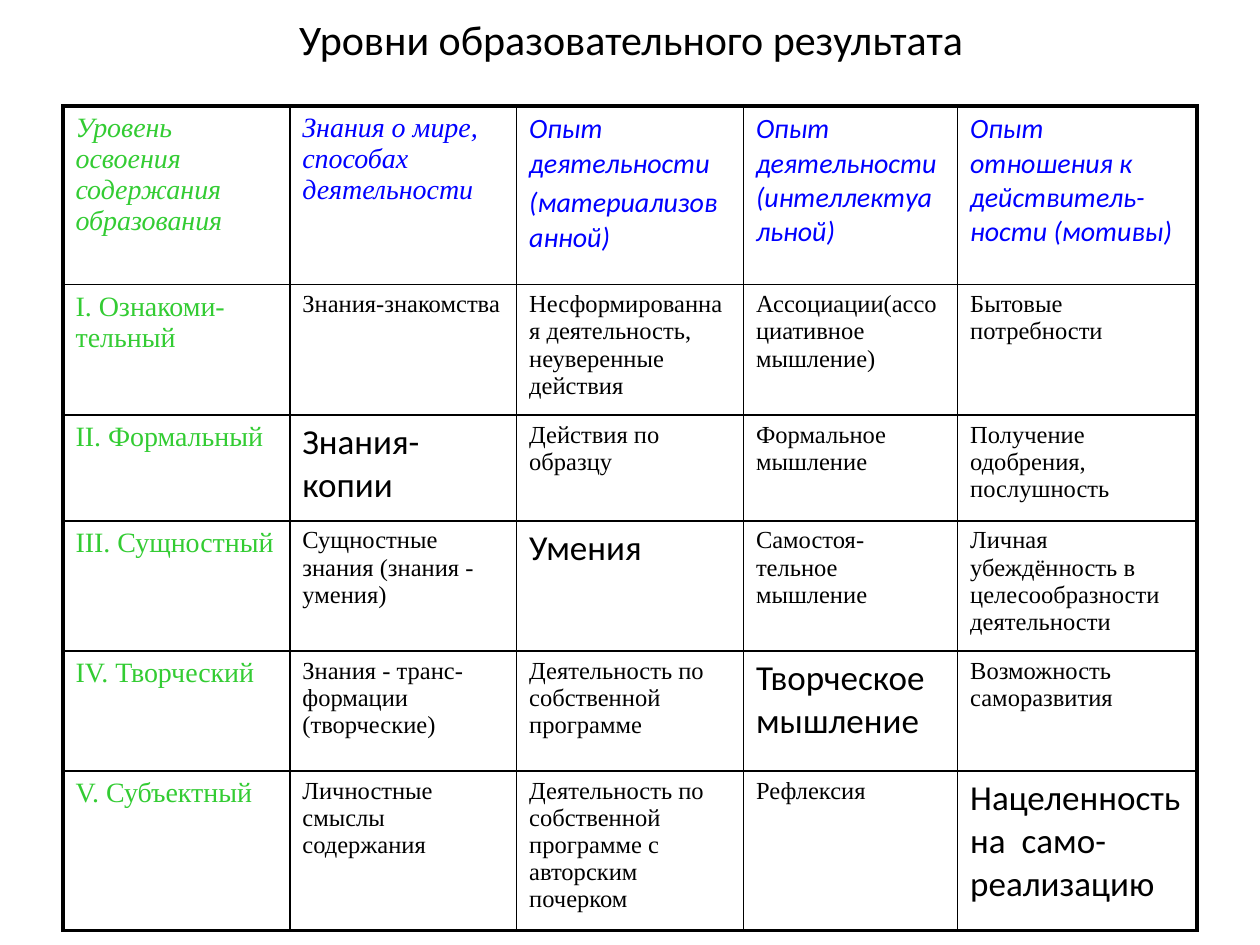
from dataclasses import dataclass, field

from lxml import etree
from pptx import Presentation, util as u
from pptx.dml.color import RGBColor
from pptx.enum import text
from pptx.oxml.ns import qn

BLACK, GREEN, BLUE = "000000", "33CC33", "0000FF"
SERIF, SANS = "Times New Roman", "Calibri"
COLS = [1.8, 1.8, 1.8, 1.7, 1.9]
ROWS = [1.42, 0.95, 0.84, 1.03, 0.95, 1.26]
LEVELS = [
    ["Уровень освоения содержания образования",
     "Знания о мире, способах деятельности",
     "Опыт деятельности\n(материализованной)",
     "Опыт деятельности (интеллектуальной)",
     "Опыт  отношения к действитель-ности (мотивы)"],
    ["I. Ознакоми-тельный", "Знания-знакомства",
     "Несформированная деятельность, неуверенные действия",
     "Ассоциации(ассоциативное мышление)", "Бытовые потребности"],
    ["II. Формальный", "Знания-копии", "Действия по образцу",
     "Формальное мышление", "Получение одобрения, послушность"],
    ["III. Сущностный", "Сущностные знания (знания - умения)", "Умения",
     "Самостоя-тельное мышление",
     "Личная убеждённость в целесообразности деятельности"],
    ["IV. Творческий", "Знания - транс-формации (творческие)",
     "Деятельность по собственной программе", "Творческое мышление",
     "Возможность саморазвития"],
    ["V. Субъектный", "Личностные смыслы содержания",
     "Деятельность по собственной программе с авторским почерком",
     "Рефлексия", "Нацеленность на  само-реализацию"],
]


def rgb(value):
    return RGBColor.from_string(value)


def level_format(row, col):
    if row == 0:
        return {"size": 16, "name": SANS if col > 1 else SERIF,
                "color": BLUE if col else GREEN, "italic": True}
    if col == 0:
        return {"size": 16, "name": SERIF, "color": GREEN}
    if row > 1 and col == row - 1:
        return {"size": 20, "name": SANS, "color": BLACK}
    return {"size": 14, "name": SERIF, "color": BLACK}


@dataclass
class Deck:
    """Holds the style and the current slide, and draws its elements."""

    s: object
    thin: float = 1
    thick: float = 2.25
    base: dict = field(default_factory=lambda: {"bold": False, "italic": False})

    def add_text(self, tf, content, fmt, before=0, align=text.PP_ALIGN.LEFT):
        values = {**self.base, **fmt}
        color = values.pop("color")
        values["size"] = u.Pt(fmt["size"])
        for i, line in enumerate(content.split("\n")):
            p = tf.add_paragraph() if i else tf.paragraphs[0]
            p.alignment = align
            p.space_before = u.Pt(before * fmt["size"])
            r = p.add_run()
            r.text = line
            for key, value in values.items():
                setattr(r.font, key, value)
            r.font.color.rgb = rgb(color)

    def title(self, content, box, fmt):
        tf = self.s.shapes.add_textbox(*map(u.Inches, box)).text_frame
        tf.word_wrap = True
        tf.vertical_anchor = text.MSO_ANCHOR.MIDDLE
        self.add_text(tf, content, fmt, align=text.PP_ALIGN.CENTER)

    def border(self, cell, side, width):
        ln = etree.SubElement(cell._tc.get_or_add_tcPr(), qn(f"a:ln{side}"),
                              w=str(u.Pt(width)))
        fill = etree.SubElement(ln, qn("a:solidFill"))
        etree.SubElement(fill, qn("a:srgbClr"), val=BLACK)

    def table(self, cells, left, top, cols, rows, fmt):
        box = map(u.Inches, (left, top, sum(cols), sum(rows)))
        tbl = self.s.shapes.add_table(len(rows), len(cols), *box).table
        tbl.first_row = tbl.horz_banding = False
        for column, width in zip(tbl.columns, cols):
            column.width = u.Inches(width)
        for i, height in enumerate(rows):
            tbl.rows[i].height = u.Inches(height)
            for j, content in enumerate(cells[i]):
                cell = tbl.cell(i, j)
                self.add_text(cell.text_frame, content, fmt(i, j), before=0.2)
                outer = {"L": j == 0, "R": j == len(cols) - 1,
                         "T": i == 0, "B": i == len(rows) - 1}
                for side, edge in outer.items():
                    self.border(cell, side, self.thick if edge else self.thin)
                cell.fill.background()


def main():
    prs = Presentation()
    prs.slide_width, prs.slide_height = u.Inches(10), u.Inches(7.5)
    deck = Deck(prs.slides.add_slide(prs.slide_layouts[6]))
    deck.title("Уровни образовательного результата", (0.51, 0, 9, 0.61),
               {"size": 24, "name": SANS, "color": BLACK})
    deck.table(LEVELS, 0.5, 0.84, COLS, ROWS, level_format)
    prs.save("out.pptx")


if __name__ == "__main__":
    main()
